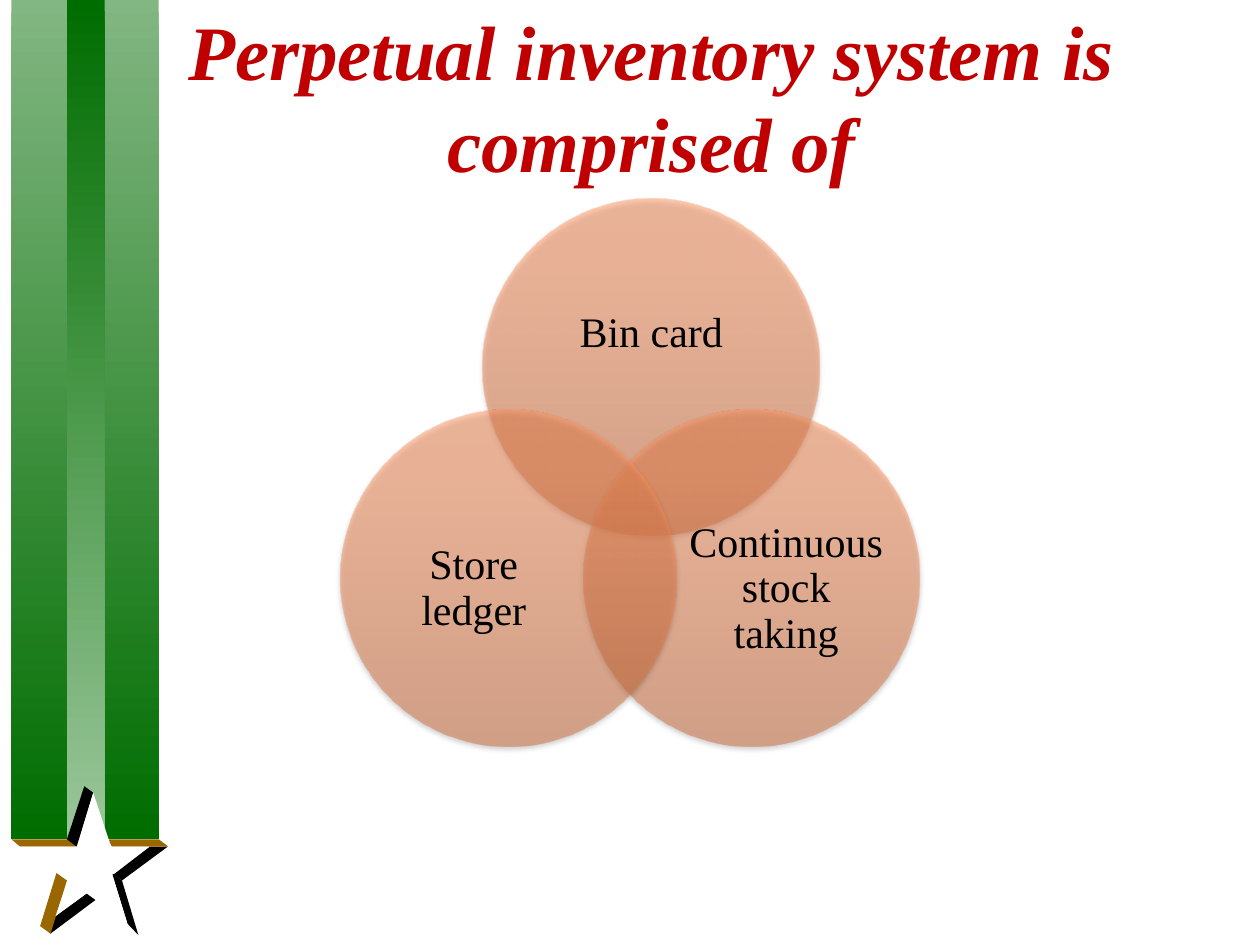
"""Build the slide on the three parts of a perpetual inventory system."""
from dataclasses import dataclass

from lxml.etree import SubElement
from pptx import Presentation
from pptx.dml.color import RGBColor
from pptx.enum.shapes import MSO_SHAPE as Preset
from pptx.enum.text import MSO_ANCHOR as Anchor, PP_ALIGN as Align
from pptx.oxml.ns import qn
from pptx.shapes.autoshape import Shape
from pptx.shapes.shapetree import SlideShapes
from pptx.util import Cm, Pt

Box = tuple[float, float, float, float]
Point = tuple[float, float]


@dataclass(frozen=True)
class Stop:
    position: int
    color: str
    opacity: int = 100


@dataclass(frozen=True)
class Theme:
    font: str = "Times New Roman"
    title_size: int = 44
    label_size: int = 24
    title: str = "C00000"
    ink: str = "000000"
    paper: str = "FFFFFF"
    gold: str = "996600"
    outer_ribbon: tuple[Stop, ...] = (Stop(0, "82B682"), Stop(100, "006D00"))
    inner_ribbon: tuple[Stop, ...] = (Stop(0, "006D00"), Stop(100, "9AC69A"))
    circle: tuple[Stop, ...] = (
        Stop(0, "CF6C3B", 50), Stop(80, "FF925B", 50), Stop(100, "FF935D", 50))


@dataclass(frozen=True)
class Facet:
    color: str
    corners: tuple[Point, ...]


@dataclass(frozen=True)
class Part:
    label: str
    left: float
    top: float
    label_box: Box


THEME = Theme()
DIAMETER = 6.78
LOWER_TOP = 8.26
TITLE = "Perpetual inventory system is comprised of"
PARTS = (
    Part("Bin card", 9.73, 4.01, (10.64, 5.21, 4.98, 3.05)),
    Part("Continuous stock taking", 11.76, LOWER_TOP, (13.82, 10.01, 4.06, 3.73)),
    Part("Store ledger", 6.86, LOWER_TOP, (7.52, 10.01, 4.06, 3.73)),
)
STAR = (
    Facet(THEME.ink, ((2.29, 17.63), (2.46, 17.75), (3.38, 17.07), (3.02, 17.07))),
    Facet(THEME.gold, ((0.23, 16.92), (0.41, 17.07), (1.57, 17.07), (1.37, 16.92))),
    Facet(THEME.ink, ((1.55, 17.07), (1.88, 15.98), (1.7, 15.85), (1.35, 16.92))),
    Facet(THEME.gold, ((2.26, 17.07), (2.18, 16.92), (3.2, 16.92), (3.4, 17.07))),
    Facet(THEME.ink, ((0.84, 18.67), (1.02, 18.82), (1.93, 18.14), (1.75, 18.01))),
    Facet(THEME.ink, ((2.57, 18.62), (2.79, 18.85), (2.46, 17.75), (2.26, 17.6))),
    Facet(THEME.gold, ((1.02, 18.82), (1.35, 17.75), (1.14, 17.6), (0.81, 18.67))),
    Facet(THEME.paper, ((1.88, 15.98), (1.55, 17.07), (0.41, 17.07), (1.37, 17.75),
                        (1.12, 18.47), (1.75, 18.01), (2.57, 18.62), (2.26, 17.63),
                        (3.0, 17.07), (2.24, 17.07))),
)


def draw_gradient(shapes: SlideShapes, preset: Preset, box: Box,
                  stops: tuple[Stop, ...], angle: int) -> Shape:
    """Draw a borderless preset shape with a linear gradient."""
    shape = shapes.add_shape(preset, *map(Cm, box))
    shape.shadow.inherit = False
    shape.line.fill.background()
    shape.fill.gradient()
    shape.fill.gradient_angle = angle
    stop_list = next(shape.element.spPr.iter(qn("a:gsLst")))
    for default in list(stop_list):
        stop_list.remove(default)
    for stop in stops:
        entry = SubElement(stop_list, qn("a:gs"), pos=str(stop.position * 1000))
        color = SubElement(entry, qn("a:srgbClr"), val=stop.color)
        SubElement(color, qn("a:alpha"), val=str(stop.opacity * 1000))
    return shape


def add_soft_shadow(shape: Shape) -> None:
    """Give a shape a faint shadow that falls straight down."""
    effects = shape.element.spPr.find(qn("a:effectLst"))
    shadow = SubElement(effects, qn("a:outerShdw"), blurRad=str(Pt(3.1)),
                        dist=str(Pt(1.8)), dir="5400000", rotWithShape="0")
    color = SubElement(shadow, qn("a:srgbClr"), val=THEME.ink)
    SubElement(color, qn("a:alpha"), val="35000")


def draw_facet(shapes: SlideShapes, facet: Facet) -> None:
    """Draw one flat facet of the star."""
    start, *rest = [(Cm(x), Cm(y)) for x, y in facet.corners]
    builder = shapes.build_freeform(*start)
    builder.add_line_segments(rest, close=True)
    shape = builder.convert_to_shape()
    shape.shadow.inherit = False
    shape.fill.solid()
    shape.fill.fore_color.rgb = RGBColor.from_string(facet.color)
    shape.line.fill.background()


def draw_text(shapes: SlideShapes, text: str, box: Box, size: int, color: str,
              margins: Box = (0, 0, 0, 0), spacing: float = 0.9,
              emphasis: bool = False) -> None:
    """Write centred, wrapped text in a box."""
    frame = shapes.add_textbox(*map(Cm, box)).text_frame
    frame.word_wrap = True
    frame.vertical_anchor = Anchor.MIDDLE
    (frame.margin_left, frame.margin_top,
     frame.margin_right, frame.margin_bottom) = map(Cm, margins)
    frame.text = text
    paragraph = frame.paragraphs[0]
    paragraph.alignment = Align.CENTER
    paragraph.line_spacing = spacing
    font = paragraph.runs[0].font
    font.name, font.size = THEME.font, Pt(size)
    font.bold = font.italic = emphasis
    font.color.rgb = RGBColor.from_string(color)


def draw_part(shapes: SlideShapes, part: Part) -> None:
    """Draw one circle of the diagram with its label."""
    circle = draw_gradient(shapes, Preset.OVAL, (part.left, part.top, DIAMETER, DIAMETER),
                           THEME.circle, 90)
    add_soft_shadow(circle)
    draw_text(shapes, part.label, part.label_box, THEME.label_size, THEME.ink)


def main() -> None:
    """Build and save the slide."""
    deck = Presentation()
    deck.slide_width, deck.slide_height = Cm(25.4), Cm(19.05)
    shapes = deck.slides.add_slide(deck.slide_layouts[6]).shapes
    draw_gradient(shapes, Preset.RECTANGLE, (0.23, 0, 2.97, 16.92), THEME.outer_ribbon, 270)
    draw_gradient(shapes, Preset.RECTANGLE, (1.35, 0, 0.76, 16.89), THEME.inner_ribbon, 270)
    for facet in STAR:
        draw_facet(shapes, facet)
    draw_text(shapes, TITLE, (2.34, 1.27, 21.59, 3.18), THEME.title_size, THEME.title,
              margins=(0.25, 0.13, 0.25, 1.98), spacing=1.0, emphasis=True)
    for part in PARTS:
        draw_part(shapes, part)
    deck.save("out.pptx")


if __name__ == "__main__":
    main()
